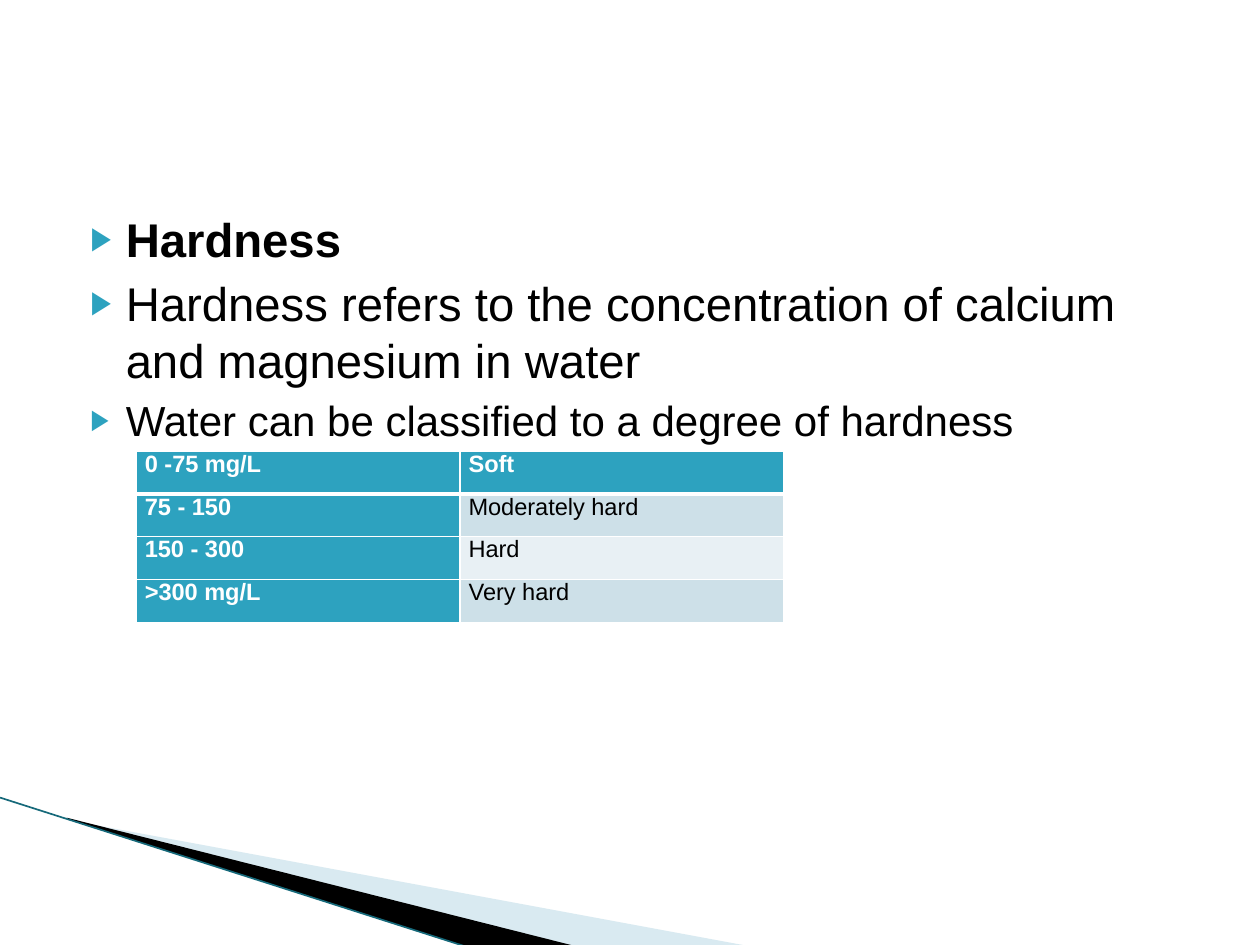
from lxml import etree
from pptx import Presentation
from pptx.dml.color import RGBColor
from pptx.enum.shapes import MSO_CONNECTOR
from pptx.oxml.ns import qn
from pptx.util import Inches, Pt

FONT = "Arial"
BLACK = RGBColor(0, 0, 0)
WHITE = RGBColor(0xFF, 0xFF, 0xFF)
TEAL = RGBColor(0x2D, 0xA2, 0xBF)
DARK_TEAL = RGBColor(0x16, 0x69, 0x7A)
PALE_BLUE = RGBColor(0xA0, 0xCB, 0xDC)
BAND_DARK = RGBColor(0xCD, 0xE0, 0xE8)
BAND_LIGHT = RGBColor(0xE8, 0xF0, 0xF4)

BULLETS = [
    ("Hardness", 27, True),
    ("Hardness refers to the concentration of calcium and magnesium in water", 27, False),
    ("Water can be classified to a degree of hardness", 24, False),
]
HARDNESS_LEVELS = [
    ("0 -75 mg/L", "Soft"),
    ("75 - 150", "Moderately hard"),
    ("150 - 300", "Hard"),
    (">300 mg/L", "Very hard"),
]


def sub(parent, tag, **attrs):
    return etree.SubElement(parent, qn(tag), **attrs)


def style_font(font, size, color, bold):
    font.name, font.size, font.bold = FONT, Pt(size), bold
    font.color.rgb = color


def add_wedge(slide, left, top, points, color):
    """Filled outline through points given relative to left and top."""
    (x0, y0), *rest = [(Inches(left + x), Inches(top + y)) for x, y in points]
    builder = slide.shapes.build_freeform(x0, y0)
    builder.add_line_segments(rest, close=True)
    sp = builder.convert_to_shape()
    sp.shadow.inherit = False
    sp.fill.solid()
    sp.fill.fore_color.rgb = color
    sp.line.fill.background()
    return sp


def add_corner_decoration(slide, left, top):
    pale = add_wedge(slide, left, top,
                     [(0.55, 0.18), (5.95, 1.18), (4.56, 1.18), (0.55, 0.17)], PALE_BLUE)
    sub(pale._element.spPr.find(".//" + qn("a:srgbClr")), "a:alpha", val="40000")
    add_wedge(slide, left, top,
              [(0.53, 0.16), (4.57, 1.18), (3.72, 1.19), (0.54, 0.17)], BLACK)
    edge = slide.shapes.add_connector(
        MSO_CONNECTOR.STRAIGHT, Inches(left), Inches(top),
        Inches(left + 3.72), Inches(top + 1.19))
    edge.line.color.rgb = DARK_TEAL
    edge.line.width = Pt(0.95)
    sub(edge._element.spPr, "a:effectLst")


def add_bullet(p):
    pPr = p._p.get_or_add_pPr()
    pPr.set("marL", str(Inches(0.4)))
    pPr.set("indent", str(Inches(-0.28)))
    sub(sub(pPr, "a:buClr"), "a:srgbClr", val=str(TEAL))
    sub(pPr, "a:buSzPct", val="68000")
    sub(pPr, "a:buFont", typeface=FONT)
    sub(pPr, "a:buChar", char="▶")


def add_body(slide, left, top, width, height):
    tf = slide.shapes.add_textbox(left, top, width, height).text_frame
    tf.word_wrap = True
    for i, (text, size, bold) in enumerate(BULLETS):
        p = tf.paragraphs[0] if i == 0 else tf.add_paragraph()
        p.text = text
        add_bullet(p)
        if i:
            p.space_before = Pt(4)
        style_font(p.runs[0].font, size, BLACK, bold)


def set_borders(cell, bottom):
    """White borders of 1 pt, with the bottom one as wide as given."""
    tcPr = cell._tc.get_or_add_tcPr()
    widths = {"a:lnL": 1, "a:lnR": 1, "a:lnT": 1, "a:lnB": bottom}
    for i, (tag, width) in enumerate(widths.items()):
        ln = etree.Element(qn(tag), w=str(Pt(width)))
        sub(sub(ln, "a:solidFill"), "a:srgbClr", val=str(WHITE))
        tcPr.insert(i, ln)


def add_hardness_table(slide, left, top, width, height):
    rows, cols = len(HARDNESS_LEVELS), len(HARDNESS_LEVELS[0])
    table = slide.shapes.add_table(rows, cols, left, top, width, height).table
    for r, level in enumerate(HARDNESS_LEVELS):
        for c, text in enumerate(level):
            heading = r == 0 or c == 0
            cell = table.cell(r, c)
            cell.text = text
            cell.margin_left = cell.margin_right = Inches(0.07)
            cell.margin_top = cell.margin_bottom = 0
            cell.fill.solid()
            band = BAND_DARK if r % 2 else BAND_LIGHT
            cell.fill.fore_color.rgb = TEAL if heading else band
            set_borders(cell, 3 if r == 0 else 1)
            style_font(cell.text_frame.paragraphs[0].runs[0].font, 13.5,
                       WHITE if heading else BLACK, heading)


def main():
    prs = Presentation()
    prs.slide_width, prs.slide_height = Inches(10), Inches(7.5)
    slide = prs.slides.add_slide(prs.slide_layouts[6])
    add_corner_decoration(slide, 0, 6.33)
    add_body(slide, Inches(0.5), Inches(1.62), Inches(9), Inches(4.95))
    add_hardness_table(slide, Inches(1.08), Inches(3.58), Inches(5.14), Inches(1.36))
    prs.save("out.pptx")


if __name__ == "__main__":
    main()
